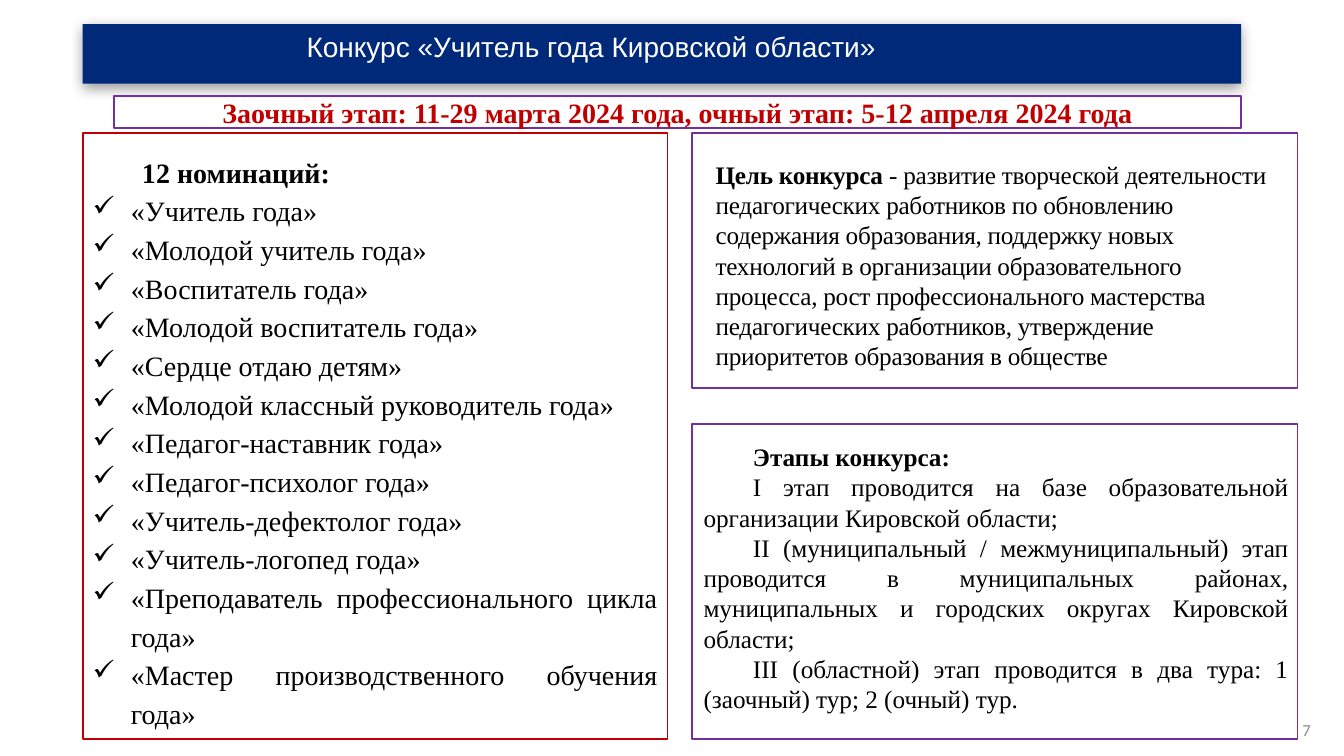
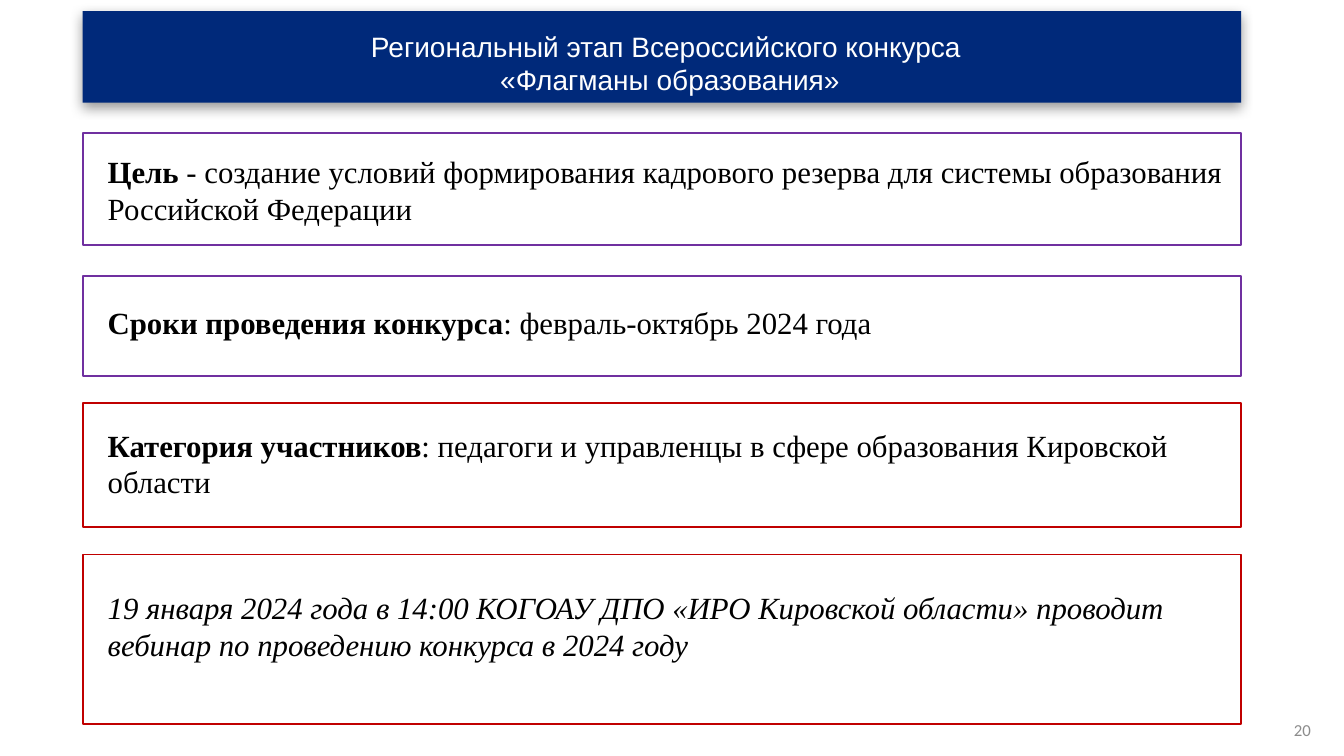
"""Build two slides about regional teaching contests."""
import dataclasses

import lxml.etree
import pptx
import pptx.dml.color
import pptx.enum.shapes
import pptx.enum.text
import pptx.oxml.ns
import pptx.util

Inches = pptx.util.Inches
Pt = pptx.util.Pt
Align = pptx.enum.text.PP_ALIGN
Anchor = pptx.enum.text.MSO_ANCHOR
qn = pptx.oxml.ns.qn


@dataclasses.dataclass(frozen=True)
class Theme:
    navy: str = "00297A"
    red: str = "C00000"
    purple: str = "7030A0"
    black: str = "000000"
    white: str = "FFFFFF"
    gray: str = "8C8C8C"
    title_font: str = "Arial"
    body_font: str = "Times New Roman"
    number_font: str = "Calibri"
    title_size: int = 20
    list_size: int = 20
    panel_size: int = 18
    large_size: int = 22
    number_size: int = 12
    frame_width: float = 1.25


theme = Theme()
LEFT, WIDTH, TOP = 0.82, 11.49, 1.32
RIGHT_LEFT, RIGHT_WIDTH = 6.86, 6.01


def add_frame(page, place, color):
    frame = page.shapes.add_shape(
        pptx.enum.shapes.MSO_SHAPE.RECTANGLE, *map(Inches, place))
    frame.shadow.inherit = False
    frame.fill.background()
    frame.line.color.rgb = pptx.dml.color.RGBColor.from_string(color)
    frame.line.width = Pt(theme.frame_width)
    return frame


def write(box, lines, size, font=theme.body_font, color=theme.black,
          align=Align.LEFT, anchor=Anchor.TOP):
    frame = box.text_frame
    frame.word_wrap = True
    frame.vertical_anchor = anchor
    for index, (lead, rest) in enumerate(lines):
        para = frame.add_paragraph() if index else frame.paragraphs[0]
        para.text = lead
        para.alignment = align
        for span in para.runs:
            span.font.bold = True
        if rest:
            span = para.add_run()
            span.text = rest
            span.font.bold = False
        for span in para.runs:
            span.font.size = Pt(size)
            span.font.name = font
            span.font.color.rgb = pptx.dml.color.RGBColor.from_string(color)


deck = pptx.Presentation()
deck.slide_width = Inches(13.33)
deck.slide_height = Inches(7.5)

headings = [
    ("Конкурс «Учитель года Кировской области»", "7",
     (0.24, 0.59), (2.94, 0.24, 8.37, 0.44), Align.LEFT),
    ("Региональный этап Всероссийского конкурса \n«Флагманы образования»", "20",
     (0.11, 0.91), (1.31, 0.24, 10.67, 0.77), Align.CENTER),
]
for heading, number, (band_top, band_height), place, align in headings:
    page = deck.slides.add_slide(deck.slide_layouts[5])
    band = add_frame(page, (LEFT, band_top, WIDTH, band_height), theme.navy)
    band.fill.solid()
    band.fill.fore_color.rgb = pptx.dml.color.RGBColor.from_string(theme.navy)
    band.line.fill.background()
    shadow = lxml.etree.SubElement(
        band.element.spPr.find(qn("a:effectLst")), qn("a:outerShdw"),
        blurRad=str(Pt(9)), dist=str(Pt(3)), dir=str(101 * 60000), rotWithShape="0")
    tint = lxml.etree.SubElement(shadow, qn("a:srgbClr"), val=theme.black)
    lxml.etree.SubElement(tint, qn("a:alpha"), val="40000")

    title = page.shapes.title
    title.left, title.top, title.width, title.height = map(Inches, place)
    band.element.addnext(title.element)
    title.text_frame.auto_size = pptx.enum.text.MSO_AUTO_SIZE.NONE
    write(title, [(heading, "")], theme.title_size, theme.title_font,
          theme.white, align)
    for span in title.text_frame.paragraphs[0].runs:
        span.font.bold = False

    number_box = page.shapes.add_textbox(*map(Inches, (10.1, 7.04, 3, 0.4)))
    write(number_box, [("", number)], theme.number_size, theme.number_font,
          theme.gray, Align.RIGHT, Anchor.MIDDLE)

teacher_page, flagship_page = deck.slides

dates = add_frame(teacher_page, (1.13, 0.95, 11.18, 0.32), theme.purple)
write(dates, [("Заочный этап: 11-29 марта 2024 года, очный этап: 5-12 апреля 2024 года", "")],
      theme.list_size, color=theme.red, align=Align.CENTER, anchor=Anchor.MIDDLE)

nominations = [
    "Учитель года", "Молодой учитель года", "Воспитатель года",
    "Молодой воспитатель года", "Сердце отдаю детям",
    "Молодой классный руководитель года", "Педагог-наставник года",
    "Педагог-психолог года", "Учитель-дефектолог года", "Учитель-логопед года",
    "Преподаватель профессионального цикла года",
    "Мастер производственного обучения года",
]
add_frame(teacher_page, (LEFT, TOP, 5.8, 6.01), theme.red)
nomination_box = teacher_page.shapes.add_textbox(*map(Inches, (LEFT, 1.44, 5.8, 5.88)))
write(nomination_box,
      [("12 номинаций:", "")] + [("", f"«{name}»") for name in nominations],
      theme.list_size, align=Align.JUSTIFY)
for para in nomination_box.text_frame.paragraphs:
    para.line_spacing = 1.15
heading_format, *item_formats = nomination_box.element.iter(qn("a:pPr"))
heading_format.set("indent", str(Inches(0.49)))
for item_format in item_formats:
    item_format.set("marL", str(Inches(0.38)))
    item_format.set("indent", str(Inches(-0.38)))
    lxml.etree.SubElement(item_format, qn("a:buChar"), char="✓")

add_frame(teacher_page, (RIGHT_LEFT, TOP, RIGHT_WIDTH, 2.53), theme.purple)
goal_box = teacher_page.shapes.add_textbox(*map(Inches, (7, 1.53, 5.79, 2.22)))
write(goal_box, [(
    "Цель конкурса ",
    "- развитие творческой деятельности педагогических работников по обновлению "
    "содержания образования, поддержку новых технологий в организации "
    "образовательного процесса, рост профессионального мастерства педагогических "
    "работников, утверждение приоритетов образования в обществе")], theme.panel_size)
for span_format in goal_box.element.iter(qn("a:rPr")):
    span_format.set("spc", "-20")

add_frame(teacher_page, (RIGHT_LEFT, 4.21, RIGHT_WIDTH, 3.12), theme.purple)
stage_box = teacher_page.shapes.add_textbox(*map(Inches, (6.21, 4.33, 6.67, 2.83)))
write(stage_box, [
    ("Этапы конкурса:", ""),
    ("", "I этап проводится на базе образовательной организации Кировской области;"),
    ("", "II (муниципальный / межмуниципальный) этап проводится в муниципальных "
         "районах, муниципальных и городских округах Кировской области;"),
    ("", "III (областной) этап проводится в два тура: 1 (заочный) тур; 2 (очный) тур."),
], theme.panel_size, align=Align.JUSTIFY)
for stage_format in stage_box.element.iter(qn("a:pPr")):
    stage_format.set("marL", str(Inches(0.67)))
    stage_format.set("indent", str(Inches(0.49)))

panels = [
    (TOP, 1.11, theme.purple, (1.47, 11.8, 0.84), "Цель",
     " - создание условий формирования кадрового резерва для системы образования "
     "Российской Федерации"),
    (2.74, 0.99, theme.purple, (2.96, 10.8, 0.47), "Сроки проведения конкурса",
     ": февраль-октябрь 2024 года"),
    (4, 1.23, theme.red, (4.18, 11.01, 0.84), "Категория участников",
     ": педагоги и управленцы в сфере образования Кировской области"),
    (5.5, 1.68, theme.red, (5.79, 11.01, 0.84), "",
     "19 января 2024 года в 14:00 КОГОАУ ДПО «ИРО Кировской области» проводит "
     "вебинар по проведению конкурса в 2024 году"),
]
for top, height, color, (text_top, text_width, text_height), lead, rest in panels:
    add_frame(flagship_page, (LEFT, top, WIDTH, height), color)
    panel_box = flagship_page.shapes.add_textbox(
        *map(Inches, (0.97, text_top, text_width, text_height)))
    write(panel_box, [(lead, rest)], theme.large_size)
    if not lead:
        panel_box.text_frame.paragraphs[0].runs[-1].font.italic = True

deck.save("out.pptx")
